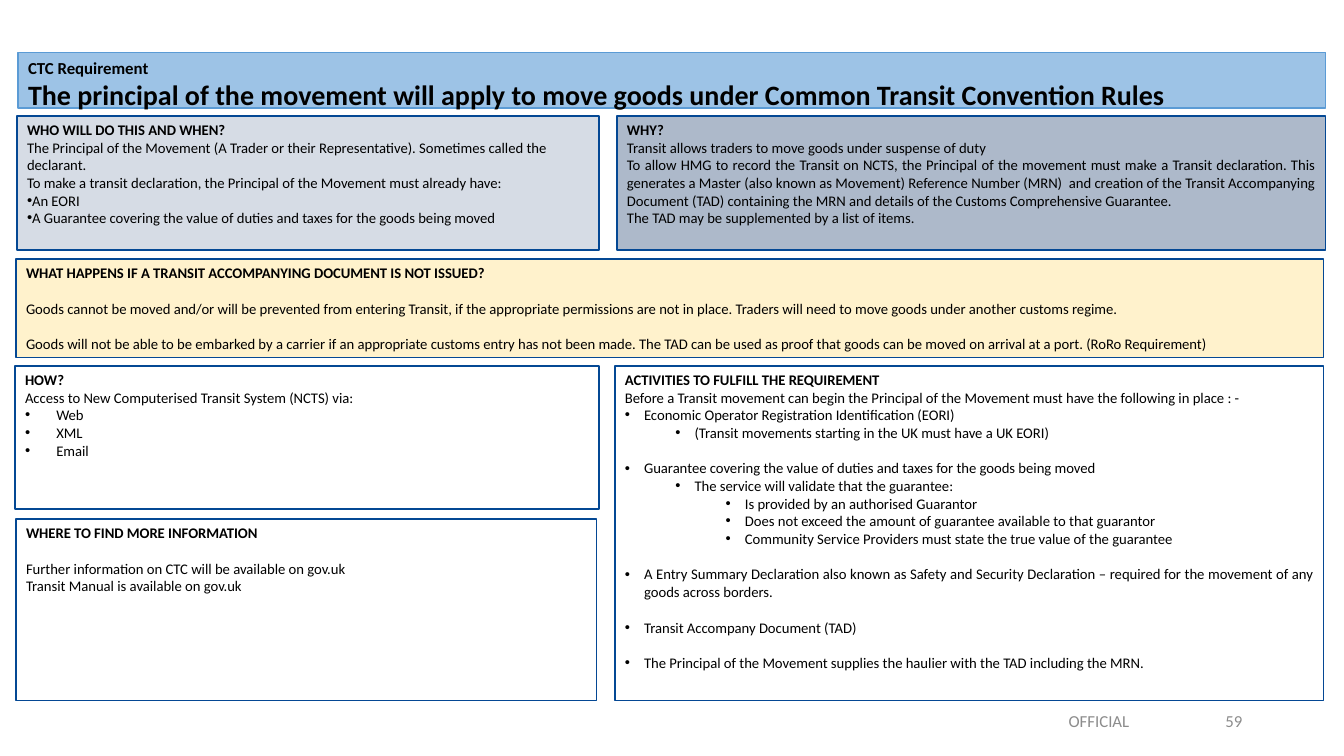
from lxml.etree import SubElement
from pptx import Presentation
from pptx.dml.color import RGBColor
from pptx.enum.shapes import MSO_SHAPE
from pptx.enum.text import MSO_ANCHOR, PP_ALIGN
from pptx.oxml.ns import qn
from pptx.util import Inches, Pt

BLACK = RGBColor(0x00, 0x00, 0x00)
WHITE = RGBColor(0xFF, 0xFF, 0xFF)
GREY = RGBColor(0x8C, 0x8C, 0x8C)
NAVY = RGBColor(0x04, 0x48, 0x94)
BLUE = RGBColor(0x5B, 0x9B, 0xD5)
SKY = RGBColor(0x9D, 0xC3, 0xE6)
PALE = RGBColor(0xD6, 0xDC, 0xE5)
SLATE = RGBColor(0xAD, 0xB9, 0xCA)
CREAM = RGBColor(0xFF, 0xF2, 0xCC)

FACE = "Calibri"
SIZE = 10.5
GAP = Pt(12.8)
LEFT, JUST = PP_ALIGN.LEFT, PP_ALIGN.JUSTIFY

BANNER = [
    ("CTC Requirement", 12),
    ("The principal of the movement will apply to move goods under Common Transit Convention Rules", 20),
]

# Each line: text, bullet level (None for plain), gap before
WHO = [
    ("The Principal of the Movement (A Trader or their Representative). Sometimes called the declarant.", None, False),
    ("To make a transit declaration, the Principal of the Movement must already have:", None, False),
    ("An EORI", 0, False),
    ("A Guarantee covering the value of duties and taxes for the goods being moved", 0, False),
]
WHY = [
    ("Transit allows traders to move goods under suspense of duty", None, False),
    ("To allow HMG to record the Transit on NCTS, the Principal of the movement must make a Transit declaration. "
     "This generates a Master (also known as Movement) Reference Number (MRN)  and creation of the Transit "
     "Accompanying Document (TAD) containing the MRN and details of the Customs Comprehensive Guarantee.", None, False),
    ("The TAD may be supplemented by a list of items.", None, False),
]
IF_NOT = [
    ("Goods cannot be moved and/or will be prevented from entering Transit, if the appropriate permissions "
     "are not in place. Traders will need to move goods under another customs regime.", None, True),
    ("Goods will not be able to be embarked by a carrier if an appropriate customs entry has not been made. "
     "The TAD can be used as proof that goods can be moved on arrival at a port. (RoRo Requirement)", None, True),
]
HOW = [
    ("Access to New Computerised Transit System (NCTS) via:", None, False),
    ("Web", 0, False),
    ("XML", 0, False),
    ("Email", 0, False),
]
TASKS = [
    ("Before a Transit movement can begin the Principal of the Movement must have the following in place : -", None, False),
    ("Economic Operator Registration Identification (EORI)", 0, False),
    ("(Transit movements starting in the UK must have a UK EORI)", 1, False),
    ("Guarantee covering the value of duties and taxes for the goods being moved", 0, True),
    ("The service will validate that the guarantee:", 1, False),
    ("Is provided by an authorised Guarantor", 2, False),
    ("Does not exceed the amount of guarantee available to that guarantor", 2, False),
    ("Community Service Providers must state the true value of the guarantee", 2, False),
    ("A Entry Summary Declaration also known as Safety and Security Declaration – required for the movement "
     "of any goods across borders.", 0, True),
    ("Transit Accompany Document (TAD)", 0, True),
    ("The Principal of the Movement supplies the haulier with the TAD including the MRN.", 0, True),
]
MORE = [
    ("Further information on CTC will be available on gov.uk", None, True),
    ("Transit Manual is available on gov.uk", None, False),
]

# Each panel: heading, lines, place, fill, alignment, base margin, hang
PANELS = [
    ("HOW?", HOW, (0.15, 3.63, 5.79, 1.42), WHITE, JUST, 0.31, 0.31),
    ("ACTIVITIES TO FULFILL THE REQUIREMENT", TASKS, (6.1, 3.63, 7.03, 3.32), WHITE, JUST, 0.19, 0.19),
    ("WHAT HAPPENS IF A TRANSIT ACCOMPANYING DOCUMENT IS NOT ISSUED?", IF_NOT,
     (0.16, 2.57, 12.97, 0.98), CREAM, LEFT, 0, 0),
    ("WHO WILL DO THIS AND WHEN?", WHO, (0.17, 1.15, 5.77, 1.33), PALE, LEFT, 0, 0.19),
    ("WHY?", WHY, (6.12, 1.15, 7.03, 1.33), SLATE, JUST, 0, 0),
    ("WHERE TO FIND MORE INFORMATION", MORE, (0.16, 5.15, 5.76, 1.8), WHITE, LEFT, 0, 0),
]
FOOTER = [
    ("59", (11.96, 6.95, 0.46, 0.4), PP_ALIGN.RIGHT),
    ("OFFICIAL", (8.65, 6.95, 4.5, 0.4), PP_ALIGN.CENTER),
]

deck = Presentation()
deck.slide_width, deck.slide_height = Inches(13.33), Inches(7.5)
slide = deck.slides.add_slide(deck.slide_layouts[6])


def add_box(place, fill, line):
    box = slide.shapes.add_shape(MSO_SHAPE.RECTANGLE, *map(Inches, place))
    box.shadow.inherit = False
    box.fill.solid()
    box.fill.fore_color.rgb = fill
    box.line.color.rgb = line
    box.line.width = Pt(1)
    frame = box.text_frame
    frame.word_wrap = True
    frame.vertical_anchor = MSO_ANCHOR.TOP
    return frame


def write(para, text, size, bold=False, color=BLACK, align=LEFT):
    para.text = text
    para.alignment = align
    font = para.font
    font.name, font.size, font.bold = FACE, Pt(size), bold
    font.color.rgb = color


def add_bullet(para, level, base, hang):
    para.level = level
    props = para._p.get_or_add_pPr()
    props.set("marL", str(Inches(base + 0.5 * level)))
    props.set("indent", str(-Inches(hang)))
    SubElement(props, qn("a:buFont")).set("typeface", "Arial")
    SubElement(props, qn("a:buChar")).set("char", "•")


frame = add_box((0.18, 0.52, 12.97, 0.55), SKY, BLUE)
for i, (text, size) in enumerate(BANNER):
    para = frame.add_paragraph() if i else frame.paragraphs[0]
    write(para, text, size, True)

for head, lines, place, fill, align, base, hang in PANELS:
    frame = add_box(place, fill, NAVY)
    write(frame.paragraphs[0], head, SIZE, True)
    for text, level, gap in lines:
        para = frame.add_paragraph()
        if level is not None:
            add_bullet(para, level, base, hang)
        if gap:
            para.space_before = GAP
        write(para, text, SIZE, align=align)

for text, place, align in FOOTER:
    frame = slide.shapes.add_textbox(*map(Inches, place)).text_frame
    frame.word_wrap = True
    frame.vertical_anchor = MSO_ANCHOR.MIDDLE
    write(frame.paragraphs[0], text, 12, color=GREY, align=align)

deck.save("out.pptx")
